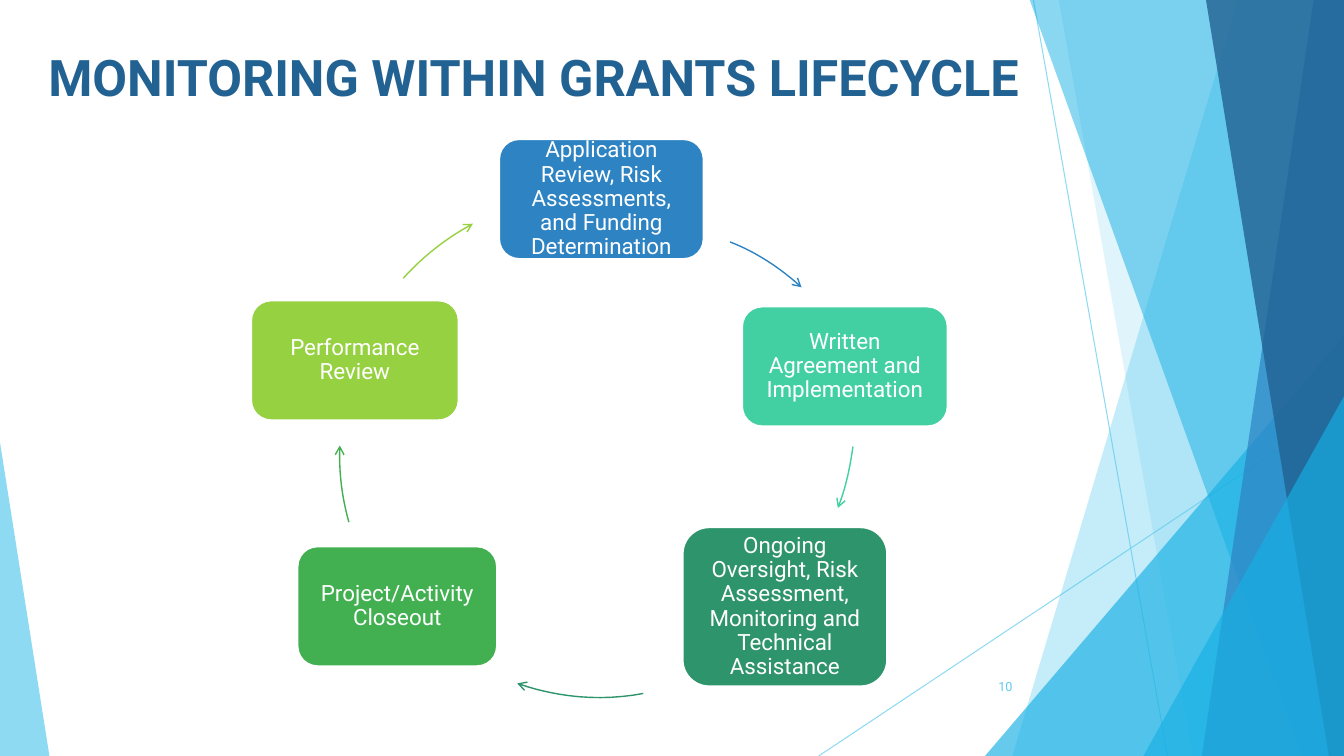
from pptx import Presentation
from pptx.dml.color import RGBColor
from pptx.enum.shapes import MSO_CONNECTOR, MSO_SHAPE
from pptx.enum.text import MSO_ANCHOR, MSO_AUTO_SIZE, PP_ALIGN
from pptx.oxml.ns import qn
from pptx.util import Inches, Pt
from lxml.etree import SubElement

WHITE = RGBColor(0xFF, 0xFF, 0xFF)
SKY = RGBColor(0x5F, 0xCB, 0xEF)
CYAN = RGBColor(0x17, 0xB0, 0xE4)
BLUE = RGBColor(0x2E, 0x83, 0xC3)
NAVY = RGBColor(0x22, 0x62, 0x92)
MINT = RGBColor(0x42, 0xD0, 0xA2)
TEAL = RGBColor(0x2E, 0x94, 0x6B)
GREEN = RGBColor(0x42, 0xB0, 0x51)
LIME = RGBColor(0x96, 0xD1, 0x41)
FONT = "Roboto"
TOP, RIGHT, BOTTOM = -0.01, 13.33, 7.5

presentation = Presentation()
presentation.slide_width = Inches(RIGHT)
presentation.slide_height = Inches(BOTTOM)
slide = presentation.slides.add_slide(presentation.slide_layouts[5])
shapes = slide.shapes


def add_path(points, closed):
    start, *rest = [(Inches(x), Inches(y)) for x, y in points]
    builder = shapes.build_freeform(*start)
    builder.add_line_segments(rest, close=closed)
    shape = builder.convert_to_shape()
    shape.shadow.inherit = False
    return shape


def set_opacity(shape, percent):
    for color in shape._element.spPr.iter(qn("a:srgbClr")):
        SubElement(color, qn("a:alpha")).set("val", str(percent * 1000))


for x1, y1, x2, y2 in [(10.25, 0, 11.58, BOTTOM), (RIGHT, 4.03, 8.12, BOTTOM)]:
    line = shapes.add_connector(
        MSO_CONNECTOR.STRAIGHT, Inches(x1), Inches(y1), Inches(x2), Inches(y2))
    line.line.color.rgb = SKY
    line.line.width = Pt(0.75)
    set_opacity(line, 70)
    SubElement(line._element.spPr, qn("a:effectLst"))

facets = [
    ("band", 12.28, 10.04, SKY, 36),
    ("band", 10.5, 11.83, SKY, 20),
    ("triangle", 9.77, 3.33, 3.56, 1, CYAN, 66),
    ("band", 10.21, 12.91, CYAN, 50),
    ("band", 13.03, 11.92, BLUE, 70),
    ("band", 11.96, 13.18, NAVY, 80),
    ("triangle", 11.34, 3.93, 1.99, 1, CYAN, 66),
    ("triangle", 0, 4.39, 0.49, 0, SKY, 70),
]
for kind, *geometry, color, opacity in facets:
    if kind == "band":
        top_x, bottom_x = geometry
        facet = add_path(
            [(top_x, TOP), (RIGHT, TOP), (RIGHT, BOTTOM), (bottom_x, BOTTOM)], True)
    else:
        left, top, width, apex = geometry
        facet = shapes.add_shape(
            MSO_SHAPE.ISOSCELES_TRIANGLE, Inches(left), Inches(top),
            Inches(width), Inches(BOTTOM - top))
        facet.adjustments[0] = apex
        facet.shadow.inherit = False
    facet.fill.solid()
    facet.fill.fore_color.rgb = color
    facet.line.fill.background()
    set_opacity(facet, opacity)

title = shapes.title
title.left, title.top = Inches(-0.16), Inches(0.41)
title.width, title.height = Inches(10.91), Inches(1.44)
number = shapes.add_textbox(Inches(9.39), Inches(6.61), Inches(0.75), Inches(0.4))
labels = [
    (title, "MONITORING WITHIN GRANTS LIFECYCLE", 36, True, NAVY,
     PP_ALIGN.CENTER, MSO_ANCHOR.TOP),
    (number, "10", 9, False, SKY, PP_ALIGN.RIGHT, MSO_ANCHOR.MIDDLE),
]
for label, text, size, bold, color, alignment, anchor in labels:
    frame = label.text_frame
    frame.text = text
    frame.word_wrap = True
    frame.auto_size = MSO_AUTO_SIZE.NONE
    frame.vertical_anchor = anchor
    paragraph = frame.paragraphs[0]
    paragraph.alignment = alignment
    paragraph.font.name = FONT
    paragraph.font.size = Pt(size)
    paragraph.font.bold = bold
    paragraph.font.color.rgb = color

stages = [
    ("Application Review, Risk Assessments, and Funding Determination", BLUE,
     (4.95, 1.38, 2.03, 1.19),
     [(7.24, 2.4), (7.5, 2.5), (7.74, 2.66), (7.95, 2.85)]),
    ("Written Agreement and Implementation", MINT,
     (7.36, 3.04, 2.04, 1.19),
     [(8.46, 4.43), (8.43, 4.64), (8.39, 4.84), (8.31, 5.04)]),
    ("Ongoing Oversight, Risk Assessment, Monitoring and Technical Assistance", TEAL,
     (6.77, 5.23, 2.03, 1.58),
     [(6.38, 6.88), (5.96, 6.96), (5.53, 6.92), (5.13, 6.78)]),
    ("Project/Activity Closeout", GREEN,
     (2.95, 5.42, 1.98, 1.19),
     [(3.46, 5.18), (3.39, 4.93), (3.36, 4.68), (3.37, 4.42)]),
    ("Performance Review", LIME,
     (2.49, 2.98, 2.06, 1.19),
     [(4, 2.76), (4.2, 2.54), (4.43, 2.36), (4.69, 2.22)]),
]
CURVE_STEPS = 12
for text, color, bounds, controls in stages:
    box = shapes.add_shape(
        MSO_SHAPE.ROUNDED_RECTANGLE, *[Inches(value) for value in bounds])
    box.shadow.inherit = False
    box.fill.solid()
    box.fill.fore_color.rgb = color
    box.line.color.rgb = WHITE
    box.line.width = Pt(1.5)
    frame = box.text_frame
    frame.text = text
    frame.word_wrap = True
    frame.vertical_anchor = MSO_ANCHOR.MIDDLE
    frame.margin_left = frame.margin_right = Inches(0.07)
    frame.margin_top = frame.margin_bottom = Inches(0.07)
    paragraph = frame.paragraphs[0]
    paragraph.alignment = PP_ALIGN.CENTER
    paragraph.line_spacing = 0.9
    paragraph.font.name = FONT
    paragraph.font.size = Pt(16)
    paragraph.font.color.rgb = WHITE

    curve = []
    for step in range(CURVE_STEPS + 1):
        t = step / CURVE_STEPS
        weights = [(1 - t) ** 3, 3 * t * (1 - t) ** 2, 3 * t ** 2 * (1 - t), t ** 3]
        curve.append([sum(weight * value for weight, value in zip(weights, axis))
                      for axis in zip(*controls)])
    arrow = add_path(curve, False)
    arrow.fill.background()
    arrow.line.color.rgb = color
    arrow.line.width = Pt(1)
    SubElement(arrow._element.spPr.find(qn("a:ln")), qn("a:tailEnd")).set("type", "arrow")

presentation.save("out.pptx")
